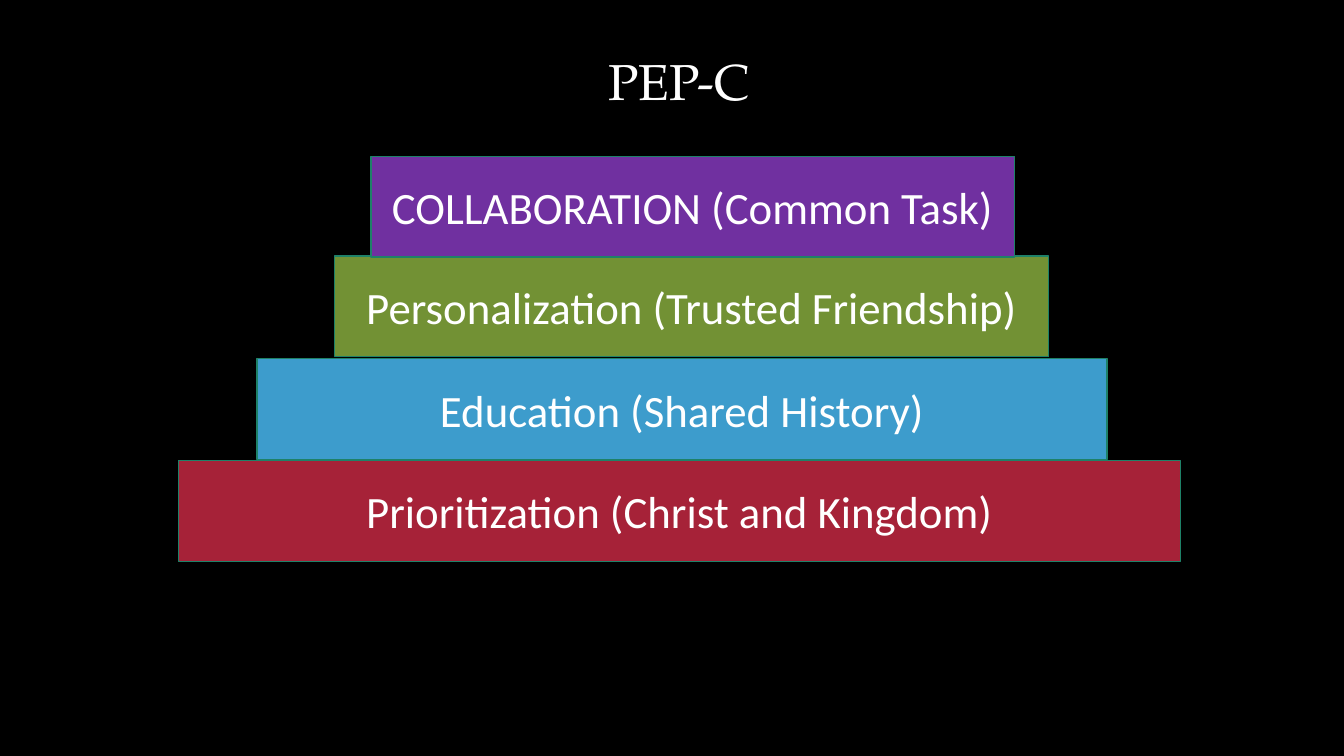
"""Build the PEP-C slide: a title above a four-step pyramid."""
from pptx import Presentation
from pptx.dml.color import RGBColor
from pptx.enum import shapes, text
from pptx.util import Inches, Pt

BLACK = RGBColor(0x00, 0x00, 0x00)
WHITE = RGBColor(0xFF, 0xFF, 0xFF)
GREEN_EDGE = RGBColor(0x1E, 0x81, 0x68)
RED = RGBColor(0xA6, 0x22, 0x38)
BLUE = RGBColor(0x3D, 0x9C, 0xCC)
OLIVE = RGBColor(0x72, 0x91, 0x34)
PURPLE = RGBColor(0x70, 0x30, 0xA0)

STEP_HEIGHT = 1
STEPS = [
    ("Prioritization (Christ and Kingdom)", RED, 1.77, 4.57, 9.94),
    ("Education (Shared History)", BLUE, 2.55, 3.56, 8.43),
    ("Personalization (Trusted Friendship)", OLIVE, 3.32, 2.54, 7.08),
    ("COLLABORATION (Common Task)", PURPLE, 3.68, 1.55, 6.38),
]


def write(frame, wording, font_name, size):
    frame.word_wrap = True
    para = frame.paragraphs[0]
    para.text = wording
    para.alignment = text.PP_ALIGN.CENTER
    para.font.name = font_name
    para.font.size = Pt(size)
    para.font.color.rgb = WHITE
    return para


deck = Presentation()
deck.slide_width = Inches(13.33)
deck.slide_height = Inches(7.5)
page = deck.slides.add_slide(deck.slide_layouts[6])
page.background.fill.solid()
page.background.fill.fore_color.rgb = BLACK

title_box = page.shapes.add_textbox(Inches(0.68), Inches(0.52), Inches(12.11), Inches(6.19))
title = write(title_box.text_frame, "PEP-C", "TeX Gyre Pagella", 36)
title.line_spacing = 0.9
title.space_before = Pt(10)

for label, color, left, top, width in STEPS:
    step = page.shapes.add_shape(
        shapes.MSO_SHAPE.RECTANGLE,
        Inches(left), Inches(top), Inches(width), Inches(STEP_HEIGHT),
    )
    step.shadow.inherit = False
    step.fill.solid()
    step.fill.fore_color.rgb = color
    step.line.color.rgb = GREEN_EDGE
    step.line.width = Pt(1)
    step.text_frame.vertical_anchor = text.MSO_ANCHOR.MIDDLE
    write(step.text_frame, label, "Calibri", 32)

deck.save("out.pptx")
